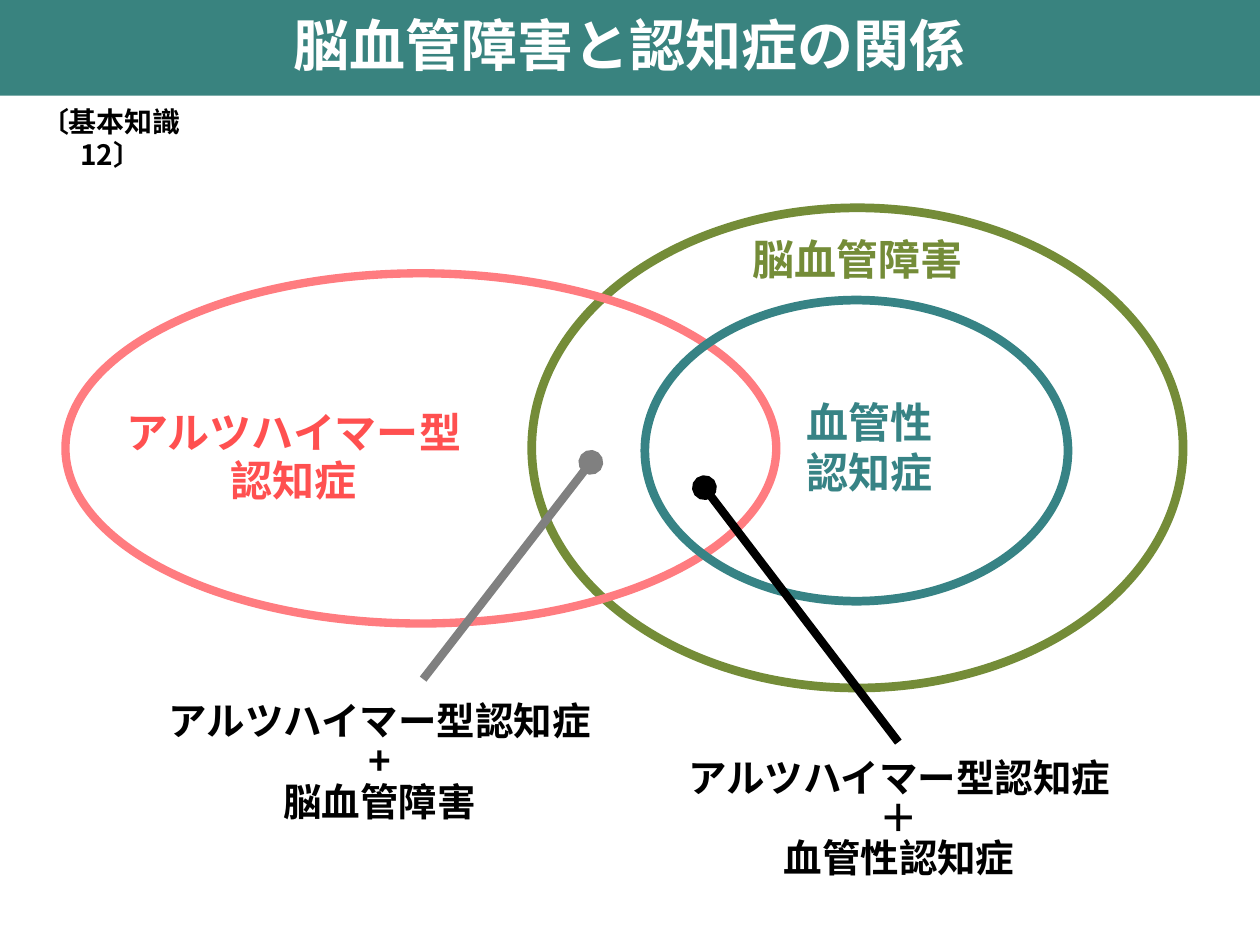
from dataclasses import dataclass

from lxml import etree
from pptx import Presentation
from pptx.dml.color import RGBColor
from pptx.enum.shapes import MSO_CONNECTOR, MSO_SHAPE
from pptx.enum.text import PP_ALIGN
from pptx.oxml.ns import qn
from pptx.util import Cm, Pt

OVAL = MSO_SHAPE.OVAL
RECT = MSO_SHAPE.RECTANGLE
STRAIGHT = MSO_CONNECTOR.STRAIGHT
LEFT = PP_ALIGN.LEFT
CENTER = PP_ALIGN.CENTER


@dataclass(frozen=True)
class Theme:
    font: str = "Noto Sans CJK JP"
    bar: str = "39837F"
    green: str = "748C38"
    pink: str = "FF7C80"
    red: str = "FF5050"
    teal: str = "378385"
    gray: str = "808080"
    black: str = "000000"
    white: str = "FFFFFF"
    title: int = 32
    label: int = 24
    note: int = 22
    tag: int = 16


class Board:
    def __init__(self, slide, theme):
        self.slide = slide
        self.theme = theme

    def shape(self, kind, box):
        shape = self.slide.shapes.add_shape(kind, *map(Cm, box))
        shape.shadow.inherit = False
        return shape

    def ring(self, box, color, width=5):
        ring = self.shape(OVAL, box)
        ring.fill.background()
        ring.line.color.rgb = RGBColor.from_string(color)
        ring.line.width = Pt(width)

    def bar(self, box, color):
        bar = self.shape(RECT, box)
        bar.fill.solid()
        bar.fill.fore_color.rgb = RGBColor.from_string(color)
        bar.line.fill.background()

    def pointer(self, start, end, color):
        line = self.slide.shapes.add_connector(STRAIGHT, *map(Cm, start + end))
        line.line.color.rgb = RGBColor.from_string(color)
        line.line.width = Pt(4.75)
        etree.SubElement(line.line._get_or_add_ln(), qn("a:headEnd"), type="oval")
        etree.SubElement(line._element.spPr, qn("a:effectLst"))

    def text(self, box, words, size, color, align=CENTER, pitch=None, before=None, wrap=True):
        frame = self.slide.shapes.add_textbox(*map(Cm, box)).text_frame
        frame.word_wrap = wrap
        frame.text = words
        for para in frame.paragraphs:
            para.alignment = align
            para.line_spacing = pitch
            para.space_before = before
            for run in para.runs:
                font = run.font
                font.size = Pt(size)
                font.bold = True
                font.color.rgb = RGBColor.from_string(color)
                font.name = self.theme.font
                etree.SubElement(run._r.rPr, qn("a:ea"), typeface=self.theme.font)


def main():
    deck = Presentation()
    deck.slide_width, deck.slide_height = Cm(25.4), Cm(19.05)
    theme = Theme()
    board = Board(deck.slides.add_slide(deck.slide_layouts[6]), theme)
    tight = {"pitch": 0.8, "before": Pt(4.8)}
    fixed = {"pitch": Pt(23)}

    board.ring((10.72, 4.19, 13.13, 9.68), theme.green)
    board.ring((1.32, 5.51, 14.33, 7.06), theme.pink, 4.75)
    board.ring((13, 6.05, 8.53, 6.07), theme.teal)

    board.pointer((11.91, 9.32), (8.53, 13.69), theme.gray)
    board.text((2.79, 14.05, 9.73, 2.72), "アルツハイマー型認知症\n+\n脳血管障害",
               theme.note, theme.black, **fixed)
    board.text((13.26, 15.19, 9.73, 2.72), "アルツハイマー型認知症\n＋\n血管性認知症",
               theme.note, theme.black, **fixed)
    board.pointer((14.2, 9.83), (18.11, 14.96), theme.black)

    board.text((14.68, 4.78, 5.21, 1.07), "脳血管障害", theme.label, theme.green, **tight)
    board.text((16, 7.87, 4.47, 2.31), "血管性\n認知症", theme.label, theme.teal, LEFT)
    board.text((0.94, 8.26, 9.96, 2.11), "アルツハイマー型\n認知症",
               theme.label, theme.red, **tight)

    board.bar((0, -0.05, 25.4, 1.98), theme.bar)
    board.text((5.64, 0.08, 14.1, 1.6), "脳血管障害と認知症の関係",
               theme.title, theme.white, wrap=False)
    board.text((0, 1.98, 4.47, 0.94), "〔基本知識12〕", theme.tag, theme.black)

    deck.save("out.pptx")


if __name__ == "__main__":
    main()
